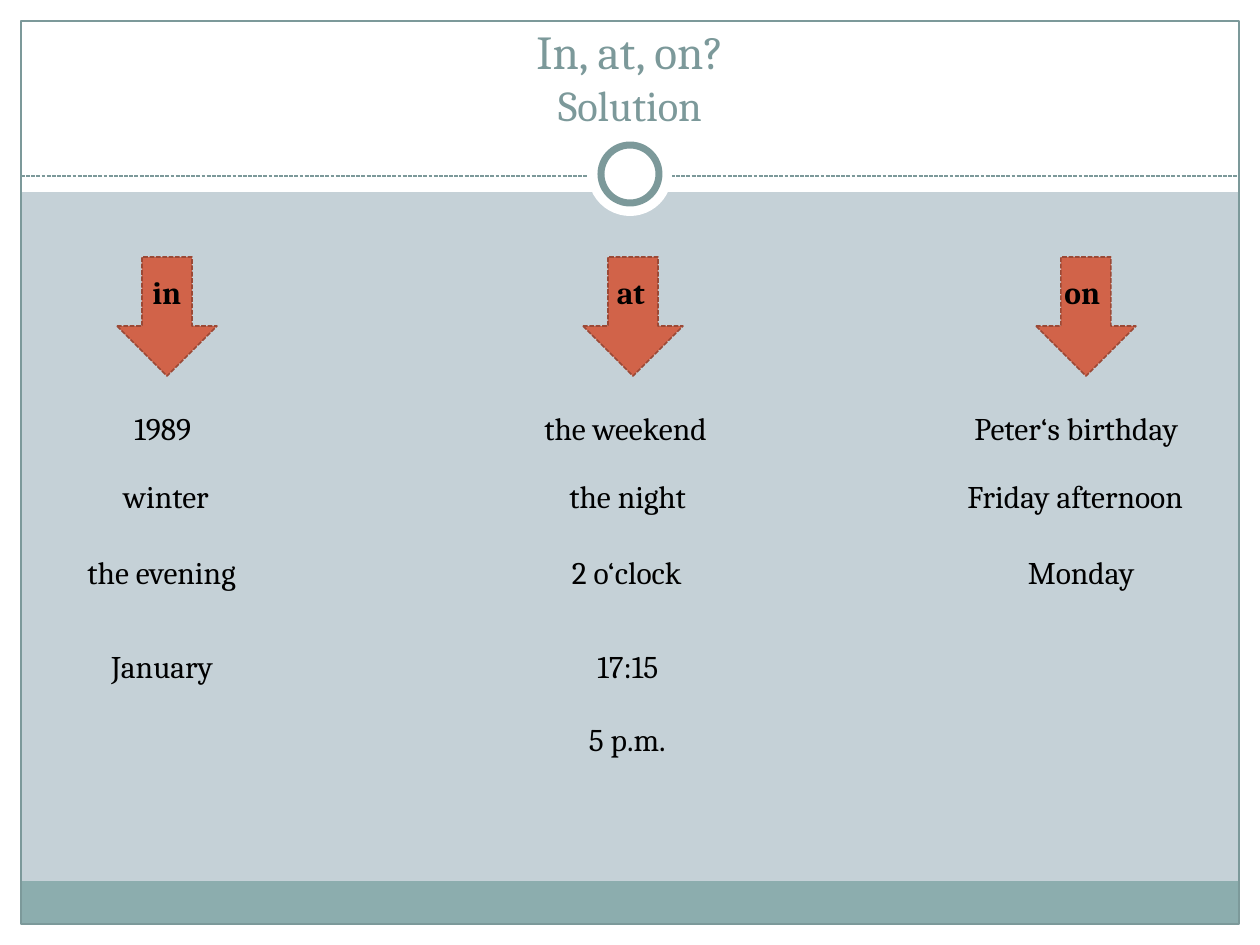
from lxml import etree
from pptx import Presentation
from pptx.dml.color import RGBColor
from pptx.enum.dml import MSO_LINE
from pptx.enum.shapes import MSO_CONNECTOR, MSO_SHAPE
from pptx.enum.text import MSO_ANCHOR, MSO_AUTO_SIZE, PP_ALIGN
from pptx.oxml.ns import qn
from pptx.util import Pt

EMU_PER_PX = 914400 / 126
WIDTH, HEIGHT = 1260, 945
MARGIN = 21
FONT = "Cambria"

WHITE = RGBColor(0xFF, 0xFF, 0xFF)
BLACK = RGBColor(0x00, 0x00, 0x00)
PALE_BLUE = RGBColor(0xC5, 0xD1, 0xD7)
TEAL = RGBColor(0x8C, 0xAD, 0xAE)
DARK_TEAL = RGBColor(0x7C, 0x99, 0x9A)
RUST = RGBColor(0xD1, 0x63, 0x49)
DARK_RUST = RGBColor(0x9B, 0x49, 0x36)

RECTANGLE, OVAL, DOWN_ARROW = MSO_SHAPE.RECTANGLE, MSO_SHAPE.OVAL, MSO_SHAPE.DOWN_ARROW
SHORT_DASH = MSO_LINE.SQUARE_DOT

HEADING_TOP, ARROW_TOP = 267, 257
ROW_TOPS = (403, 471, 547, 641, 714)
WORD_HEIGHT = 50

# Word centre, arrow left, heading, entries; each word comes with its box width.
COLUMNS = (
    (169, 117, ("in", 58),
     (("1989", 94), ("winter", 116), ("the evening", 188), ("January", 140))),
    (633, 583, ("at", 57),
     (("the weekend", 202), ("the night", 152), ("2 o‘clock", 147),
      ("17:15", 96), ("5 p.m.", 113))),
    (1086, 1036, ("on", 68),
     (("Peter‘s birthday", 248), ("Friday afternoon", 262), ("Monday", 141))),
)


def px(*lengths):
    return [round(length * EMU_PER_PX) for length in lengths]


def add_shape(page, kind, box, fill=None, line=None, weight=0.75, dash=None):
    shape = page.shapes.add_shape(kind, *px(*box))
    shape.shadow.inherit = False
    if fill is None:
        shape.fill.background()
    else:
        shape.fill.solid()
        shape.fill.fore_color.rgb = fill
    if line is None:
        shape.line.fill.background()
    else:
        shape.line.color.rgb = line
        shape.line.width = Pt(weight)
        if dash is not None:
            shape.line.dash_style = dash


def add_frame(page):
    """White margins, footer band and outline."""
    inner_width, inner_height = WIDTH - 2 * MARGIN, HEIGHT - 2 * MARGIN
    for box in (
        (0, HEIGHT - MARGIN, WIDTH, MARGIN),
        (0, 0, WIDTH, 192),
        (0, 0, MARGIN, HEIGHT),
        (WIDTH - MARGIN, 0, MARGIN, HEIGHT),
    ):
        add_shape(page, RECTANGLE, box, WHITE)
    add_shape(page, RECTANGLE, (MARGIN, 881, inner_width, 43), TEAL)
    add_shape(page, RECTANGLE, (MARGIN, MARGIN, inner_width, inner_height), line=DARK_TEAL)


def add_divider(page, y):
    """Dashed rule with a ring at its middle."""
    rule = page.shapes.add_connector(
        MSO_CONNECTOR.STRAIGHT, *px(MARGIN, y, WIDTH - MARGIN, y))
    etree.SubElement(rule._element.spPr, qn("a:effectLst"))
    rule.line.color.rgb = DARK_TEAL
    rule.line.width = Pt(0.75)
    rule.line.dash_style = SHORT_DASH
    for size, line in ((84, None), (58, DARK_TEAL)):
        box = ((WIDTH - size) / 2, y - 2 - size / 2, size, size)
        add_shape(page, OVAL, box, WHITE, line, weight=4)


def add_title(page, box):
    frame = page.shapes.add_textbox(*px(*box)).text_frame
    frame.word_wrap = True
    frame.vertical_anchor = MSO_ANCHOR.BOTTOM
    para = frame.paragraphs[0]
    para.alignment = PP_ALIGN.CENTER
    para.font.name = FONT
    para.font.color.rgb = DARK_TEAL
    heading = para.add_run()
    heading.text = "In, at, on?"
    heading.font.size = Pt(27)
    para.add_line_break()
    subheading = para.add_run()
    subheading.text = "Solution"
    subheading.font.size = Pt(24.3)


def add_word(page, word, centre, top, bold=False):
    text, width = word
    frame = page.shapes.add_textbox(
        *px(centre - width / 2, top, width, WORD_HEIGHT)).text_frame
    frame.word_wrap = False
    frame.auto_size = MSO_AUTO_SIZE.SHAPE_TO_FIT_TEXT
    para = frame.paragraphs[0]
    para.text = text
    para.font.name = FONT
    para.font.size = Pt(18)
    para.font.bold = bold
    para.font.color.rgb = BLACK


def add_column(page, centre, arrow_left, heading, entries):
    add_shape(page, DOWN_ARROW, (arrow_left, ARROW_TOP, 100, 119),
              RUST, DARK_RUST, 0.9, SHORT_DASH)
    add_word(page, heading, centre, HEADING_TOP, bold=True)
    for entry, top in zip(entries, ROW_TOPS):
        add_word(page, entry, centre, top)


def main():
    deck = Presentation()
    deck.slide_width, deck.slide_height = px(WIDTH, HEIGHT)
    page = deck.slides.add_slide(deck.slide_layouts[6])
    page.background.fill.solid()
    page.background.fill.fore_color.rgb = PALE_BLUE
    add_frame(page)
    add_divider(page, 176)
    add_title(page, (42, 31, 1176, 105))
    for column in COLUMNS:
        add_column(page, *column)
    deck.save("out.pptx")


if __name__ == "__main__":
    main()
